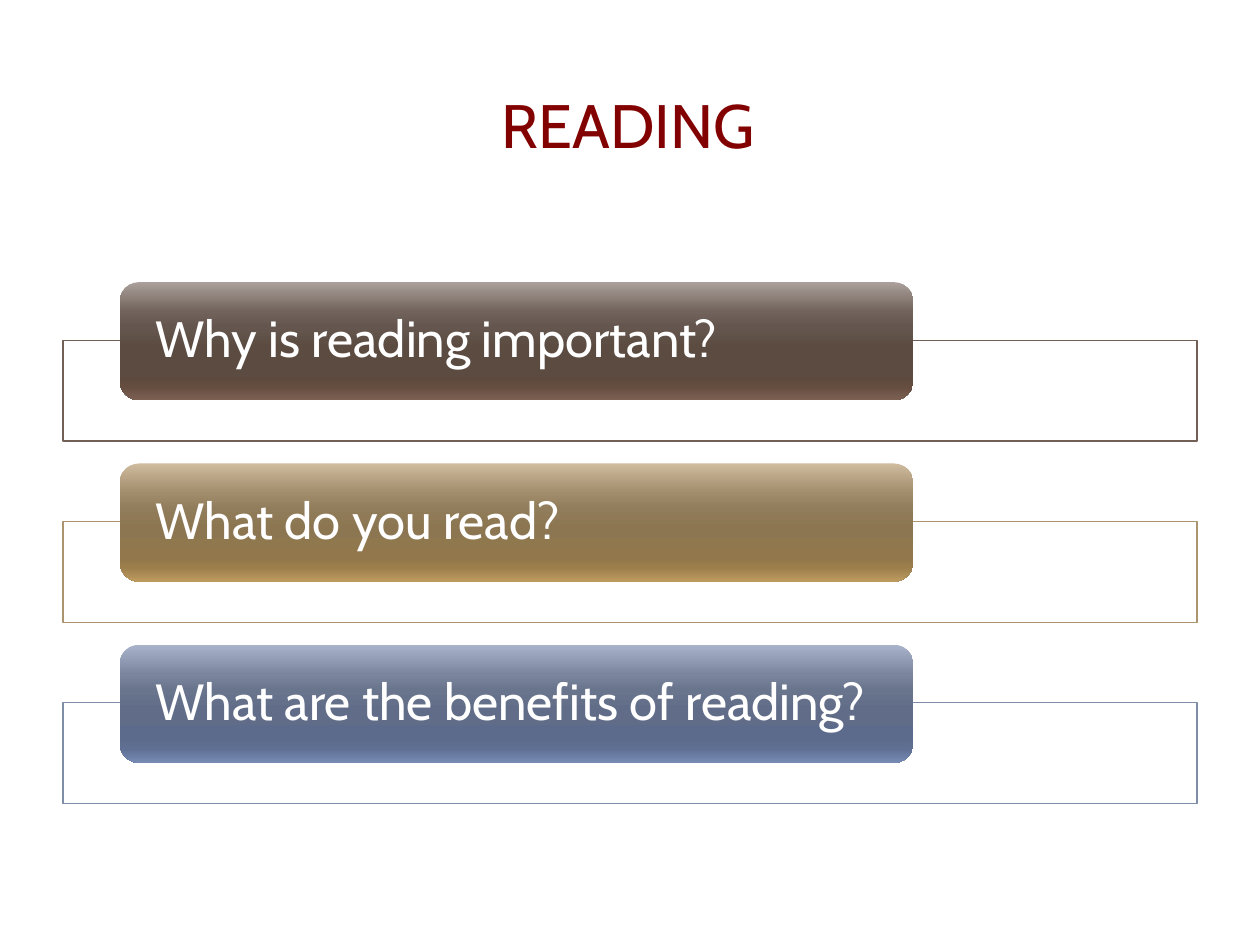
from lxml.etree import SubElement
from pptx import Presentation
from pptx.dml.color import RGBColor
from pptx.enum.shapes import MSO_SHAPE as Shape
from pptx.enum.text import MSO_ANCHOR as Anchor, PP_ALIGN as Align
from pptx.oxml.ns import qn
from pptx.util import Pt

COLORS = {
    "title": "820101",
    "text": "FFFFFF",
    "frame": "FFFFFF",
    "brown": "726056",
    "gold": "AC956E",
    "blue": "808DA9",
}
STOPS = (0, 25, 38, 55, 80, 88, 100)
GRADIENTS = {
    "brown": ("ABA09B", "71635B", "64564E", "5B4B41", "5D493E", "644D3F", "7C6153"),
    "gold": ("CFBB9E", "A18D6C", "917C5B", "8C7651", "91774B", "9C7E4B", "BE9B60"),
    "blue": ("A9B3CB", "7B869E", "69748D", "616D88", "5C6B8B", "5F7094", "778BB5"),
}
QUESTIONS = (
    ("Why is reading important?", "brown"),
    ("What do you read?", "gold"),
    ("What are the benefits of reading?", "blue"),
)
FIRST_TOP = 161.2
PITCH = 103.6
FRAME_OFFSET = 33.2


def apply(target, formats):
    for name, value in formats.items():
        setattr(target, name, value)


class SlideBuilder:
    font = "Cabin"

    def __init__(self, slide):
        self.slide = slide

    def add_text(self, shape, text, size, color, align, inset):
        frame = shape.text_frame
        apply(frame, {
            "word_wrap": True,
            "vertical_anchor": Anchor.MIDDLE,
            "margin_left": Pt(inset),
            "margin_right": Pt(inset),
            "margin_top": 0,
            "margin_bottom": 0,
        })
        paragraph = frame.paragraphs[0]
        apply(paragraph, {"text": text, "alignment": align, "line_spacing": 0.9})
        apply(paragraph.runs[0].font, {"name": self.font, "size": Pt(size)})
        paragraph.runs[0].font.color.rgb = RGBColor.from_string(COLORS[color])

    def title(self, text, left, top, width, height):
        box = self.slide.shapes.add_textbox(Pt(left), Pt(top), Pt(width), Pt(height))
        self.add_text(box, text, 35, "title", Align.CENTER, 7.2)

    def shape(self, kind, left, top, width, height):
        shape = self.slide.shapes.add_shape(kind, Pt(left), Pt(top), Pt(width), Pt(height))
        shape.shadow.inherit = False
        return shape

    def frame(self, color, left, top, width, height):
        frame = self.shape(Shape.RECTANGLE, left, top, width, height)
        frame.fill.solid()
        frame.fill.fore_color.rgb = RGBColor.from_string(COLORS["frame"])
        frame.line.color.rgb = RGBColor.from_string(COLORS[color])
        frame.line.width = Pt(0.75)

    def bar(self, text, color, left, top, width, height):
        bar = self.shape(Shape.ROUNDED_RECTANGLE, left, top, width, height)
        bar.line.fill.background()
        bar.fill.gradient()
        bar.fill.gradient_angle = 270
        stop_list = next(bar._element.spPr.iter(qn("a:gsLst")))
        stop_list.clear()
        for position, value in zip(STOPS, GRADIENTS[color]):
            stop = SubElement(stop_list, qn("a:gs"), pos=str(position * 1000))
            SubElement(stop, qn("a:srgbClr"), val=value)
        self.add_text(bar, text, 29, "text", Align.LEFT, 17.2)


def main():
    presentation = Presentation()
    apply(presentation, {"slide_width": Pt(720), "slide_height": Pt(540)})
    builder = SlideBuilder(presentation.slides.add_slide(presentation.slide_layouts[6]))
    builder.title("READING", 34, 32.4, 650, 82)
    for index, (question, color) in enumerate(QUESTIONS):
        top = FIRST_TOP + index * PITCH
        builder.frame(color, 36, top + FRAME_OFFSET, 648, 57.6)
        builder.bar(question, color, 68.4, top, 453.6, 67.6)
    presentation.save("out.pptx")


if __name__ == "__main__":
    main()
